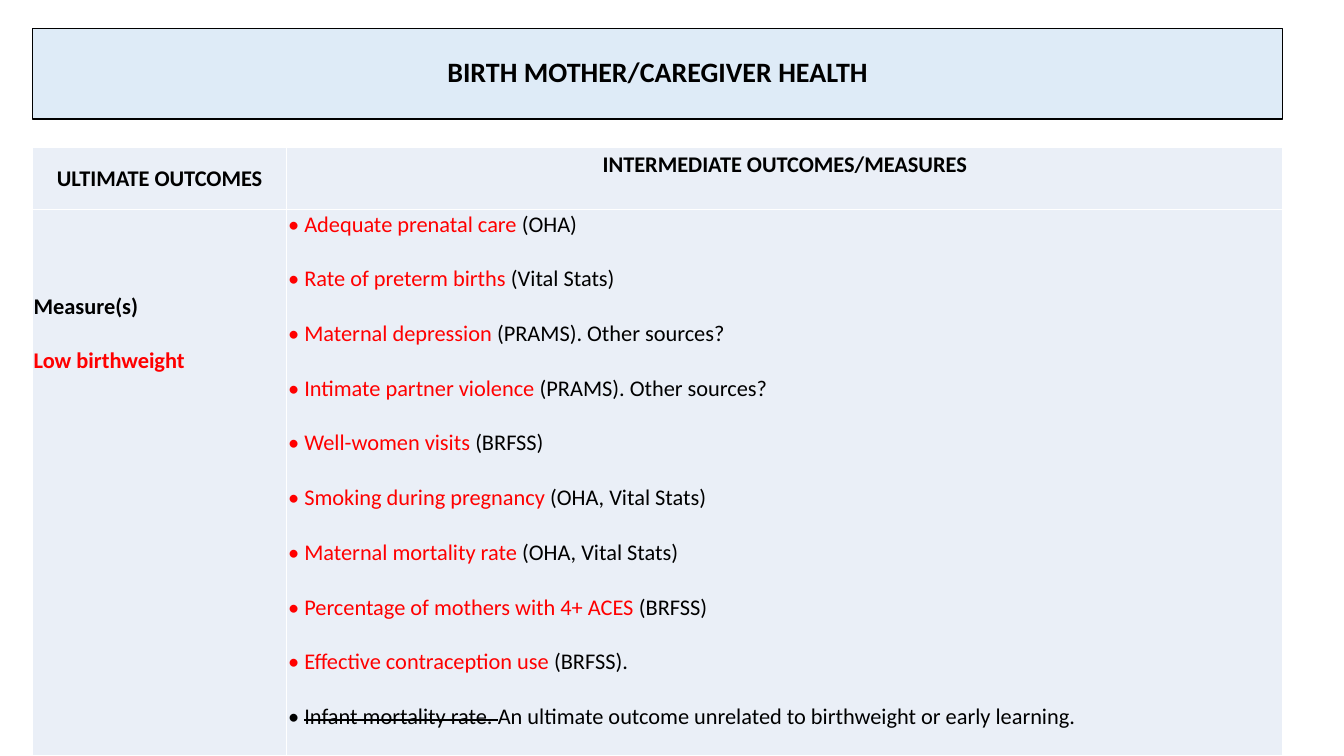
from dataclasses import dataclass

from lxml import etree
from pptx import Presentation
from pptx.dml.color import RGBColor
from pptx.enum import text
from pptx.oxml import ns
from pptx.util import Cm, Pt

TITLE = "BIRTH MOTHER/CAREGIVER HEALTH"
HEADINGS = ["ULTIMATE OUTCOMES", "INTERMEDIATE OUTCOMES/MEASURES"]
ULTIMATE = [("Measure(s)", "ink"), ("Low birthweight", "accent")]
INTERMEDIATE = [
    ("Adequate prenatal care ", "(OHA)"),
    ("Rate of preterm births ", "(Vital Stats)"),
    ("Maternal depression ", "(PRAMS). Other sources?"),
    ("Intimate partner violence ", "(PRAMS). Other sources?"),
    ("Well-women visits ", "(BRFSS)"),
    ("Smoking during pregnancy ", "(OHA, Vital Stats)"),
    ("Maternal mortality rate ", "(OHA, Vital Stats)"),
    ("Percentage of mothers with 4+ ACES ", "(BRFSS)"),
    ("Effective contraception use ", "(BRFSS)."),
]
DROPPED = ("Infant mortality rate. ",
           "An ultimate outcome unrelated to birthweight or early learning.")


@dataclass(frozen=True)
class Theme:
    font: str = "Calibri"
    ink: RGBColor = RGBColor(0, 0, 0)
    accent: RGBColor = RGBColor(255, 0, 0)
    banner: RGBColor = RGBColor(0xDE, 0xEB, 0xF7)
    cell: RGBColor = RGBColor(0xEA, 0xEF, 0xF7)
    title_size: int = 20
    body_size: float = 16
    line: float = 19.53


THEME = Theme()
LEFT, WIDTH = Cm(0.82), Cm(31.51)
COLUMNS = [Cm(6.41), Cm(25.1)]
ROWS = [Cm(1.57), Cm(13.77)]
INSET = Cm(0.03)
BULLET_INDENT = Cm(0.41)


def add_text(paragraph, words, color=THEME.ink, size=THEME.body_size, bold=False, strike=False):
    run = paragraph.add_run()
    run.text = words
    run.font.name = THEME.font
    run.font.size = Pt(size)
    run.font.bold = bold
    run.font.color.rgb = color
    if strike:
        run._r.get_or_add_rPr().set("strike", "sngStrike")


def next_paragraph(frame, index):
    if index == 0:
        return frame.paragraphs[0]
    paragraph = frame.add_paragraph()
    paragraph.space_before = Pt(THEME.line)
    return paragraph


def add_bullet(paragraph):
    properties = paragraph._p.get_or_add_pPr()
    properties.set("marL", str(BULLET_INDENT))
    properties.set("indent", str(-BULLET_INDENT))
    font = etree.SubElement(properties, ns.qn("a:buFont"))
    font.set("typeface", THEME.font)
    etree.SubElement(properties, ns.qn("a:buChar")).set("char", "•")


def build_title(slide):
    title = slide.shapes.title
    title.left, title.top, title.width, title.height = LEFT, Cm(0.71), WIDTH, Cm(2.29)
    title.fill.solid()
    title.fill.fore_color.rgb = THEME.banner
    title.line.color.rgb = THEME.ink
    title.line.width = Pt(0.75)
    title.text_frame.vertical_anchor = text.MSO_ANCHOR.MIDDLE
    paragraph = title.text_frame.paragraphs[0]
    paragraph.alignment = text.PP_ALIGN.CENTER
    paragraph.line_spacing = 0.9
    add_text(paragraph, TITLE, size=THEME.title_size, bold=True)


def build_table(slide):
    table = slide.shapes.add_table(2, 2, LEFT, Cm(3.71), WIDTH, sum(ROWS)).table
    table.first_row = table.horz_banding = False
    for column, width in zip(table.columns, COLUMNS):
        column.width = width
    for row, height in zip(table.rows, ROWS):
        row.height = height
    for cell in table.iter_cells():
        cell.fill.solid()
        cell.fill.fore_color.rgb = THEME.cell
        cell.margin_left = cell.margin_right = cell.margin_top = INSET
        cell.margin_bottom = 0

    for index, heading in enumerate(HEADINGS):
        cell = table.cell(0, index)
        cell.vertical_anchor = text.MSO_ANCHOR.MIDDLE
        paragraph = cell.text_frame.paragraphs[0]
        paragraph.alignment = text.PP_ALIGN.CENTER
        add_text(paragraph, heading, bold=True)
    table.cell(0, 1).margin_bottom = Pt(THEME.line)

    ultimate, intermediate = table.cell(1, 0), table.cell(1, 1)
    ultimate.margin_top = INSET + Pt(3 * THEME.line)
    for index, (words, color) in enumerate(ULTIMATE):
        paragraph = next_paragraph(ultimate.text_frame, index)
        add_text(paragraph, words, color=getattr(THEME, color), bold=True)

    for index, (measure, source) in enumerate(INTERMEDIATE + [DROPPED]):
        dropped = (measure, source) == DROPPED
        paragraph = next_paragraph(intermediate.text_frame, index)
        add_bullet(paragraph)
        add_text(paragraph, measure, color=THEME.ink if dropped else THEME.accent, strike=dropped)
        add_text(paragraph, source)


def main():
    presentation = Presentation()
    presentation.slide_width, presentation.slide_height = Cm(33.87), Cm(19.05)
    slide = presentation.slides.add_slide(presentation.slide_layouts[5])
    build_title(slide)
    build_table(slide)
    presentation.save("out.pptx")


if __name__ == "__main__":
    main()
